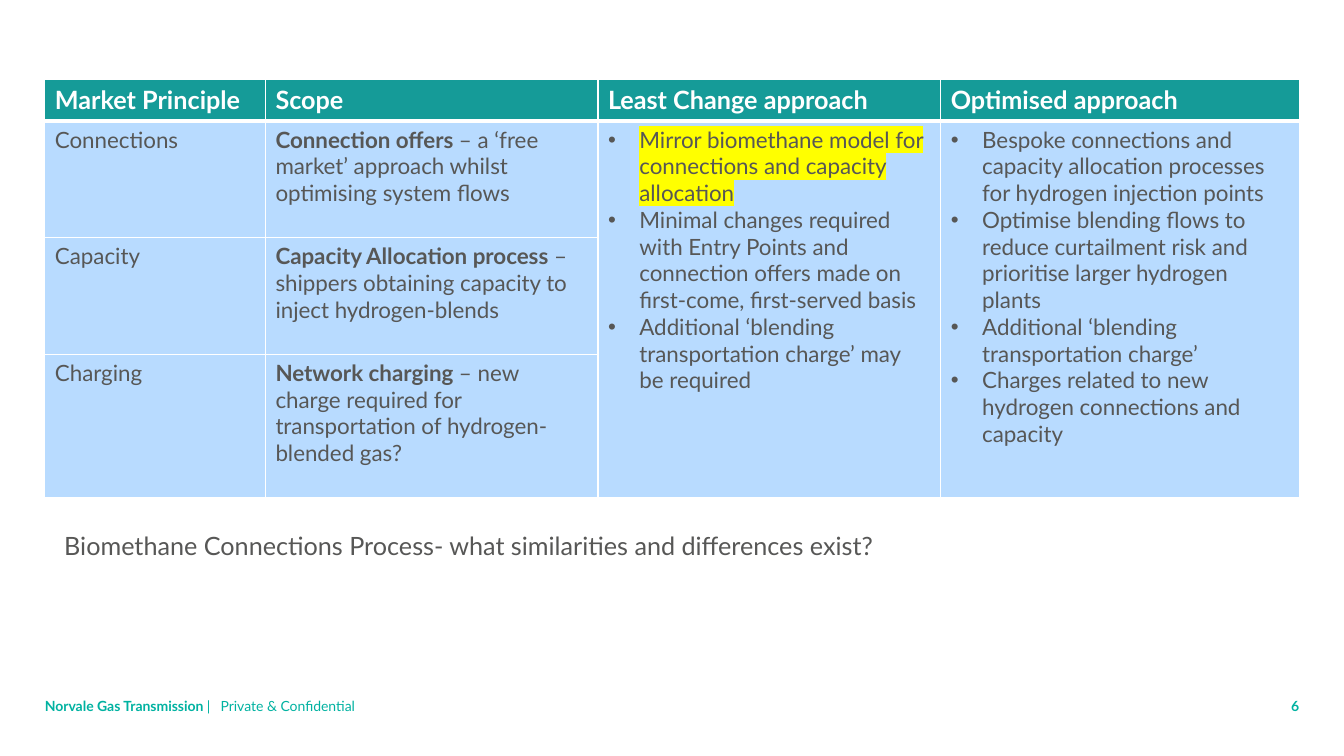
from pptx import Presentation
from pptx import util as u
from pptx.dml.color import RGBColor
from pptx.enum import text
from pptx.oxml import ns
from lxml import etree

TEAL = RGBColor(0x15, 0x9B, 0x98)
FOOTER_TEAL = RGBColor(0x00, 0xB2, 0xA1)
PALE_BLUE = RGBColor(0xB8, 0xDB, 0xFF)
GREY = RGBColor(0x57, 0x57, 0x56)
WHITE = RGBColor(0xFF, 0xFF, 0xFF)
YELLOW = RGBColor(0xFF, 0xFF, 0x00)
FONT = "Lato"

COLUMN_WIDTHS = (5.56, 8.38, 8.64, 9.03)
ROW_HEIGHTS = (1.04, 2.94, 2.94, 3.62)
HEADERS = ("Market Principle", "Scope", "Least Change approach", "Optimised approach")
PRINCIPLES = (
    ("Connections", "Connection offers ",
     "– a ‘free market’ approach whilst optimising system flows"),
    ("Capacity", "Capacity Allocation process ",
     "– shippers obtaining capacity to inject hydrogen-blends"),
    ("Charging", "Network charging ",
     "– new charge required for transportation of hydrogen-blended gas?"),
)
LEAST_CHANGE = (
    "Mirror biomethane model for connections and capacity allocation",
    "Minimal changes required with Entry Points and connection offers made on "
    "first-come, first-served basis",
    "Additional ‘blending transportation charge’ may be required",
)
OPTIMISED = (
    "Bespoke connections and capacity allocation processes for hydrogen injection points",
    "Optimise blending flows to reduce curtailment risk and prioritise larger hydrogen plants",
    "Additional ‘blending transportation charge’",
    "Charges related to new hydrogen connections and capacity",
)


def add_run(paragraph, content, size, color, bold=False):
    run = paragraph.add_run()
    run.text = content
    run.font.name = FONT
    run.font.size = u.Pt(size)
    run.font.bold = bold
    run.font.color.rgb = color
    return run


def add_label(slide, left, top, width, height, runs, size, color, align=None, inset=True):
    shape = slide.shapes.add_textbox(u.Cm(left), u.Cm(top), u.Cm(width), u.Cm(height))
    frame = shape.text_frame
    frame.word_wrap = True
    if not inset:
        frame.margin_left = frame.margin_right = frame.margin_top = frame.margin_bottom = 0
        frame.vertical_anchor = text.MSO_ANCHOR.MIDDLE
    paragraph = frame.paragraphs[0]
    paragraph.alignment = align
    for content, bold in runs:
        add_run(paragraph, content, size, color, bold)


def highlight(run, color):
    properties = run.font._element
    mark = etree.Element(ns.qn("a:highlight"))
    etree.SubElement(mark, ns.qn("a:srgbClr"), val=str(color))
    properties.find(ns.qn("a:solidFill")).addnext(mark)


def set_bullet(paragraph):
    properties = paragraph._p.get_or_add_pPr()
    properties.set("marL", str(u.Cm(0.79)))
    properties.set("indent", str(u.Cm(-0.79)))
    etree.SubElement(properties, ns.qn("a:buFont"), typeface="Arial")
    etree.SubElement(properties, ns.qn("a:buChar"), char="•")


def style_cell(cell, fill, edge_widths):
    cell.fill.solid()
    cell.fill.fore_color.rgb = fill
    properties = cell._tc.get_or_add_tcPr()
    for position, (edge, width) in enumerate(edge_widths.items()):
        line = etree.Element(ns.qn(f"a:ln{edge}"), w=str(u.Pt(width)))
        solid = etree.SubElement(line, ns.qn("a:solidFill"))
        etree.SubElement(solid, ns.qn("a:srgbClr"), val=str(WHITE))
        properties.insert(position, line)


def add_bullets(cell, items):
    runs = []
    for index, item in enumerate(items):
        frame = cell.text_frame
        paragraph = frame.add_paragraph() if index else frame.paragraphs[0]
        set_bullet(paragraph)
        runs.append(add_run(paragraph, item, 16, GREY))
    return runs


def add_principles_table(slide):
    table = slide.shapes.add_table(
        len(ROW_HEIGHTS), len(COLUMN_WIDTHS), u.Cm(1.13), u.Cm(2.01),
        u.Cm(sum(COLUMN_WIDTHS)), u.Cm(sum(ROW_HEIGHTS))).table
    table.horz_banding = False
    for column, width in zip(table.columns, COLUMN_WIDTHS):
        column.width = u.Cm(width)
    for index, (row, height) in enumerate(zip(table.rows, ROW_HEIGHTS)):
        row.height = u.Cm(height)
        edges = {"L": 1, "R": 1, "T": 3 if index == 1 else 1, "B": 1 if index else 3}
        for cell in row.cells:
            style_cell(cell, PALE_BLUE if index else TEAL, edges)

    for column, header in enumerate(HEADERS):
        add_run(table.cell(0, column).text_frame.paragraphs[0], header, 18, WHITE, True)
    for row, (principle, lead, detail) in enumerate(PRINCIPLES, 1):
        add_run(table.cell(row, 0).text_frame.paragraphs[0], principle, 16, GREY)
        scope = table.cell(row, 1).text_frame.paragraphs[0]
        add_run(scope, lead, 16, GREY, True)
        add_run(scope, detail, 16, GREY)
    for column in (2, 3):
        table.cell(1, column).merge(table.cell(3, column))
    least_change_runs = add_bullets(table.cell(1, 2), LEAST_CHANGE)
    highlight(least_change_runs[0], YELLOW)
    add_bullets(table.cell(1, 3), OPTIMISED)


def add_footer(slide):
    parts = (
        (1.13, 4.44, [("Norvale Gas Transmission ", True), ("|", False)], None),
        (5.56, 18.36, [("Private & Confidential", False)], None),
        (31.55, 1.19, [("6", True)], text.PP_ALIGN.RIGHT),
    )
    for left, width, runs, align in parts:
        add_label(slide, left, 17.48, width, 0.61, runs, 10, FOOTER_TEAL, align, inset=False)


def main():
    presentation = Presentation()
    presentation.slide_width = u.Cm(33.87)
    presentation.slide_height = u.Cm(19.05)
    slide = presentation.slides.add_slide(presentation.slide_layouts[6])
    add_footer(slide)
    add_principles_table(slide)
    question = "Biomethane Connections Process- what similarities and differences exist?"
    add_label(slide, 1.37, 13.23, 31.37, 1.02, [(question, False)], 18, GREY)
    presentation.save("out.pptx")


if __name__ == "__main__":
    main()
